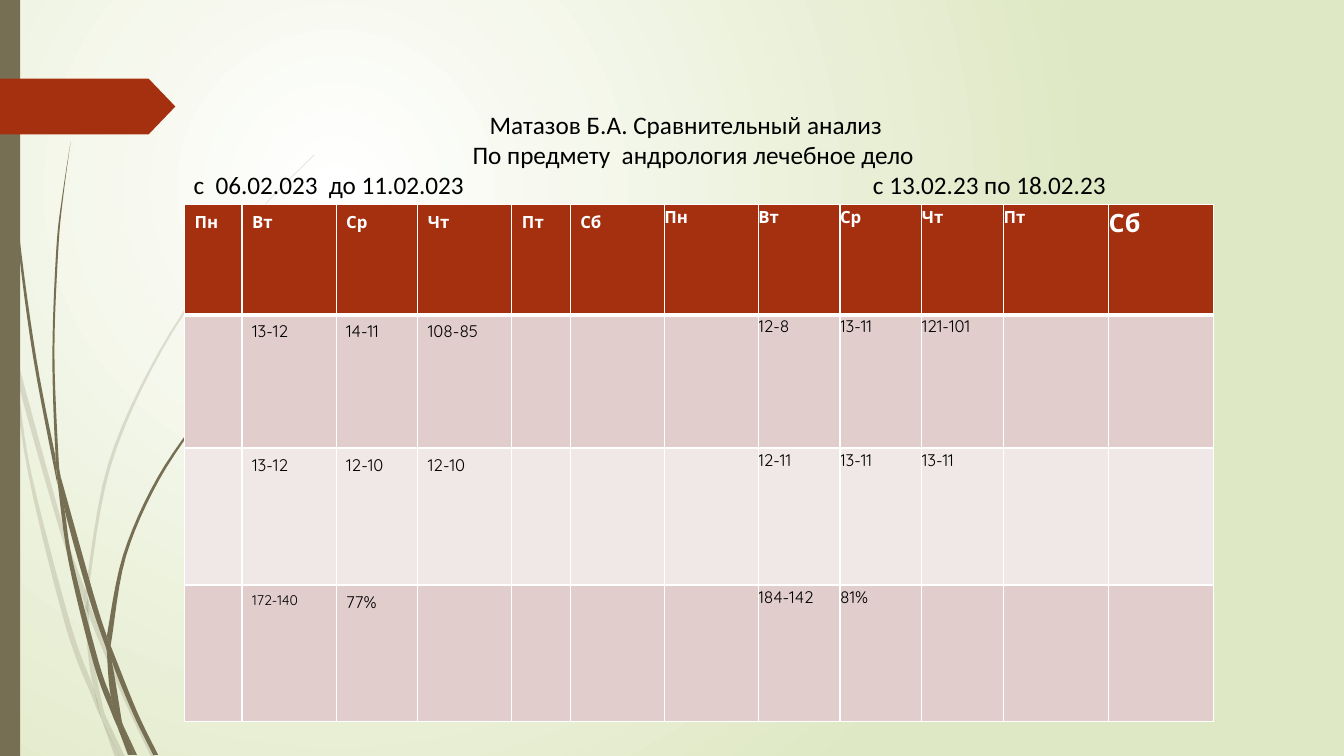
from lxml import etree
from pptx import Presentation
from pptx.dml.color import RGBColor
from pptx.enum.shapes import MSO_SHAPE
from pptx.enum.text import MSO_ANCHOR
from pptx.oxml.ns import qn
from pptx.util import Cm, Pt

RECTANGLE = MSO_SHAPE.RECTANGLE
ARROW_TAG = MSO_SHAPE.PENTAGON
MIDDLE = MSO_ANCHOR.MIDDLE

WHITE = RGBColor(0xFF, 0xFF, 0xFF)
BLACK = RGBColor(0, 0, 0)
MIST = RGBColor(0xDF, 0xE8, 0xC4)
OLIVE = RGBColor(0x76, 0x6F, 0x54)
RUST = RGBColor(0xA5, 0x30, 0x10)
ROSE = RGBColor(0xE1, 0xCD, 0xCC)
PALE_ROSE = RGBColor(0xF0, 0xE8, 0xE7)

GRASS_UNIT = Cm(2.54)
STEPS = 6
# Each piece of a blade has two edges, one out and one back, as knots in grass units.
PALE_BLADES = [
    ([(.14, 3.45), (.17, 3.76), (.58, 5.22), (.84, 5.99)], [(.85, 5.86), (.62, 5.2), (.14, 3.45)]),
    ([(.88, 5.96), (.88, 6.1), (1.23, 6.94), (1.5, 7.51)], [(1.55, 7.51), (1.27, 6.92), (.92, 6.07), (.88, 5.96)]),
    ([(1.05, 7.11), (1.19, 7.51)], [(1.24, 7.51), (1.05, 7.11)]),
    ([(.11, 3.5), (.28, 4.7), (.65, 6.21), (.92, 6.93), (1.01, 7.14)],
     [(.99, 7.07), (.93, 6.83), (.7, 6.19), (.31, 4.69), (.17, 3.76), (.11, 3.5)]),
    ([(.84, 5.99), (.87, 6.46), (.93, 6.83), (1.05, 7.11)], [(1.03, 7.06), (.91, 6.46), (.88, 6.1), (.84, 5.99)]),
    ([(.85, 5.86), (.85, 5.84), (1.07, 4.61), (1.58, 3.48), (2.28, 2.44), (2.68, 1.97), (3.12, 1.53)],
     [(3.12, 1.54), (2.68, 1.98), (2.29, 2.45), (1.6, 3.49), (1.1, 4.62), (.88, 5.84), (.88, 5.96)]),
    ([(1.01, 7.14), (1.14, 7.51)], [(1.19, 7.51), (1.01, 7.14)]),
    ([(.85, 5.86), (.84, 5.99), (.88, 6.1)], [(.88, 5.96), (.85, 5.86)]),
    ([(.93, 6.83), (1.01, 7.14), (1.19, 7.51)], [(1.05, 7.11), (.96, 6.92), (.93, 6.83)]),
]
DARK_BLADES = [
    ([(.03, 0), (.07, 1.1), (.17, 2.33), (.33, 3.55), (.57, 4.81)],
     [(.55, 4.53), (.36, 3.55), (.19, 2.32), (.08, 1.09), (.04, 0)]),
    ([(.6, 4.72), (.64, 5.05), (.88, 5.92), (1.06, 6.45)], [(1.06, 6.31), (.93, 5.9), (.6, 4.72)]),
    ([(1.1, 6.41), (1.11, 6.56), (1.32, 7.08), (1.52, 7.49)], [(1.57, 7.49), (1.36, 7.06), (1.1, 6.41)]),
    ([(.57, 4.77), (.68, 5.57), (.93, 6.59), (1.11, 7.08), (1.17, 7.22)],
     [(1.1, 6.91), (.98, 6.57), (.72, 5.56), (.64, 5.05), (.57, 4.77)]),
    ([(.6, 4.72), (.55, 4.49), (.52, 3.49), (.56, 2.45), (.62, 1.93), (.7, 1.41)],
     [(.7, 1.41), (.63, 1.93), (.58, 2.45), (.54, 3.49), (.58, 4.53), (.6, 4.72)]),
    ([(1.22, 7.19), (1.33, 7.49)], [(1.36, 7.49), (1.22, 7.19)]),
    ([(.55, 4.49), (.57, 4.77), (.64, 5.05)], [(.6, 4.72), (.55, 4.49)]),
    ([(1.06, 6.31), (1.22, 5.51), (1.56, 4.74), (2.04, 4.05), (2.31, 3.73), (2.6, 3.44)],
     [(2.61, 3.44), (2.31, 3.74), (2.05, 4.06), (1.58, 4.76), (1.25, 5.52), (1.11, 6.33), (1.1, 6.41)]),
    ([(1.17, 7.22), (1.27, 7.49)], [(1.31, 7.49), (1.17, 7.22)]),
    ([(1.06, 6.45), (1.1, 6.91), (1.22, 7.19)], [(1.21, 7.16), (1.11, 6.56), (1.06, 6.45)]),
    ([(1.06, 6.31), (1.06, 6.45), (1.11, 6.56)], [(1.1, 6.41), (1.06, 6.31)]),
    ([(1.1, 6.91), (1.17, 7.22), (1.3, 7.49)], [(1.33, 7.49), (1.22, 7.19), (1.1, 6.91)]),
]

COLUMN_WIDTHS = [1.45, 2.37, 2.06, 2.37, 1.47, 2.37, 2.37, 2.06, 2.06, 2.06, 2.65, 2.65]
ROW_HEIGHTS = [2.77, 3.36, 3.45, 3.45]
WEEK = ["Пн", "Вт", "Ср", "Чт", "Пт", "Сб"]
ATTENDANCE = [
    WEEK + WEEK,
    ["", "13-12", "14-11", "108-85", "", "", "", "12-8", "13-11", "121-101", "", ""],
    ["", "13-12", "12-10", "12-10", "", "", "", "12-11", "13-11", "13-11", "", ""],
    ["", "172-140", "77%", "", "", "", "", "184-142", "81%", "", "", ""],
]
ROW_FILLS = [RUST, ROSE, PALE_ROSE, ROSE]
SPECIAL_SIZES = {(0, 11): 18, (3, 1): 10}

HEADING = [  # text, indent in cm
    ("Матазов Б.А. Сравнительный анализ", 7.46),
    ("По предмету  андрология лечебное дело", 7.03),
    ("с  06.02.023  до 11.02.023\tс 13.02.23 по 18.02.23", 0),
]
SECOND_WEEK_TAB = 17.12


def paint(shape, color, alpha=None):
    shape.shadow.inherit = False
    shape.fill.solid()
    shape.fill.fore_color.rgb = color
    shape.line.fill.background()
    if alpha is not None:
        srgb = shape.fill._xPr.find(qn("a:solidFill")).find(qn("a:srgbClr"))
        etree.SubElement(srgb, qn("a:alpha"), val=str(alpha * 1000))


def smooth_edge(knots):
    """Return points of a Catmull-Rom curve through the knots."""
    padded = [knots[0], *knots, knots[-1]]
    points = [knots[0]]
    for a, b, c, d in zip(padded, padded[1:], padded[2:], padded[3:]):
        for step in range(1, STEPS + 1):
            t = step / STEPS
            points.append(tuple(
                q + t * ((r - p) + t * ((2 * p - 5 * q + 4 * r - s)
                                        + t * (3 * q - p - 3 * r + s))) / 2
                for p, q, r, s in zip(a, b, c, d)))
    return points


def add_grass(slide, left, top, blades, alpha=None):
    for edges in blades:
        outline = [(left + x * GRASS_UNIT, top + y * GRASS_UNIT)
                   for edge in edges for x, y in smooth_edge(edge)]
        builder = slide.shapes.build_freeform(*outline[0])
        builder.add_line_segments(outline[1:], close=True)
        paint(builder.convert_to_shape(), OLIVE, alpha)


def add_backdrop(slide, left, top, height):
    fill = slide.background.fill
    fill.gradient()
    for stop, color, position in zip(fill.gradient_stops, (WHITE, MIST), (0, 1)):
        stop.color.rgb = color
        stop.position = position
    gradient = slide.element.find(".//" + qn("a:gradFill"))
    gradient.remove(gradient.find(qn("a:lin")))
    circle = etree.SubElement(gradient, qn("a:path"), {"path": "circle"})
    etree.SubElement(circle, qn("a:fillToRect"), l="50000", t="50000", r="100000", b="100000")

    add_grass(slide, left, top, PALE_BLADES, alpha=20)
    add_grass(slide, left, top, DARK_BLADES)
    side_bar = slide.shapes.add_shape(RECTANGLE, left, top, Cm(0.51), height)
    paint(side_bar, OLIVE)
    tag = slide.shapes.add_shape(ARROW_TAG, left, top + Cm(1.98), Cm(4.42), Cm(1.41))
    tag.adjustments[0] = 0.48
    paint(tag, RUST)


def add_borders(cell, bottom_width):
    properties = cell._tc.get_or_add_tcPr()
    widths = {"lnL": 1, "lnR": 1, "lnT": 1, "lnB": bottom_width}
    for index, (side, width) in enumerate(widths.items()):
        border = etree.Element(qn("a:" + side), w=str(Pt(width)))
        solid = etree.SubElement(border, qn("a:solidFill"))
        etree.SubElement(solid, qn("a:srgbClr"), val=str(WHITE))
        properties.insert(index, border)


def add_attendance_table(slide, left, top):
    frame = slide.shapes.add_table(len(ROW_HEIGHTS), len(COLUMN_WIDTHS), left, top,
                                   Cm(sum(COLUMN_WIDTHS)), Cm(sum(ROW_HEIGHTS)))
    table = frame.table
    for column, width in zip(table.columns, COLUMN_WIDTHS):
        column.width = Cm(width)
    for r, (row, height, values) in enumerate(zip(table.rows, ROW_HEIGHTS, ATTENDANCE)):
        row.height = Cm(height)
        header = r == 0
        for c, (cell, value) in enumerate(zip(row.cells, values)):
            cell.fill.solid()
            cell.fill.fore_color.rgb = ROW_FILLS[r]
            add_borders(cell, 3 if header else 1)
            if c >= len(WEEK):
                cell.margin_left = cell.margin_right = 0
                cell.margin_top = cell.margin_bottom = 0
            paragraph = cell.text_frame.paragraphs[0]
            paragraph.text = value
            paragraph.line_spacing = 1.07
            for run in paragraph.runs:
                run.font.name = "Quicksand"
                run.font.size = Pt(SPECIAL_SIZES.get((r, c), 12))
                run.font.bold = header
                run.font.color.rgb = WHITE if header else BLACK


def add_heading(slide, left, top, width, height):
    frame = slide.shapes.add_textbox(left, top, width, height).text_frame
    frame.word_wrap = True
    frame.vertical_anchor = MIDDLE
    frame.text = "\n".join(text for text, _ in HEADING)
    for paragraph, (_, indent) in zip(frame.paragraphs, HEADING):
        properties = paragraph._p.get_or_add_pPr()
        properties.set("marL", str(Cm(indent)))
        tabs = etree.SubElement(properties, qn("a:tabLst"))
        etree.SubElement(tabs, qn("a:tab"), pos=str(Cm(SECOND_WEEK_TAB)), algn="l")
        for run in paragraph.runs:
            run.font.name = "Calibri"
            run.font.size = Pt(18)
            run.font.color.rgb = BLACK


def main():
    presentation = Presentation()
    presentation.slide_width = Cm(33.87)
    presentation.slide_height = Cm(19.05)
    slide = presentation.slides.add_slide(presentation.slide_layouts[6])
    add_backdrop(slide, 0, 0, presentation.slide_height)
    add_attendance_table(slide, Cm(4.65), Cm(5.16))
    add_heading(slide, Cm(4.63), Cm(2.61), Cm(25.76), Cm(2.57))
    presentation.save("out.pptx")


if __name__ == "__main__":
    main()
